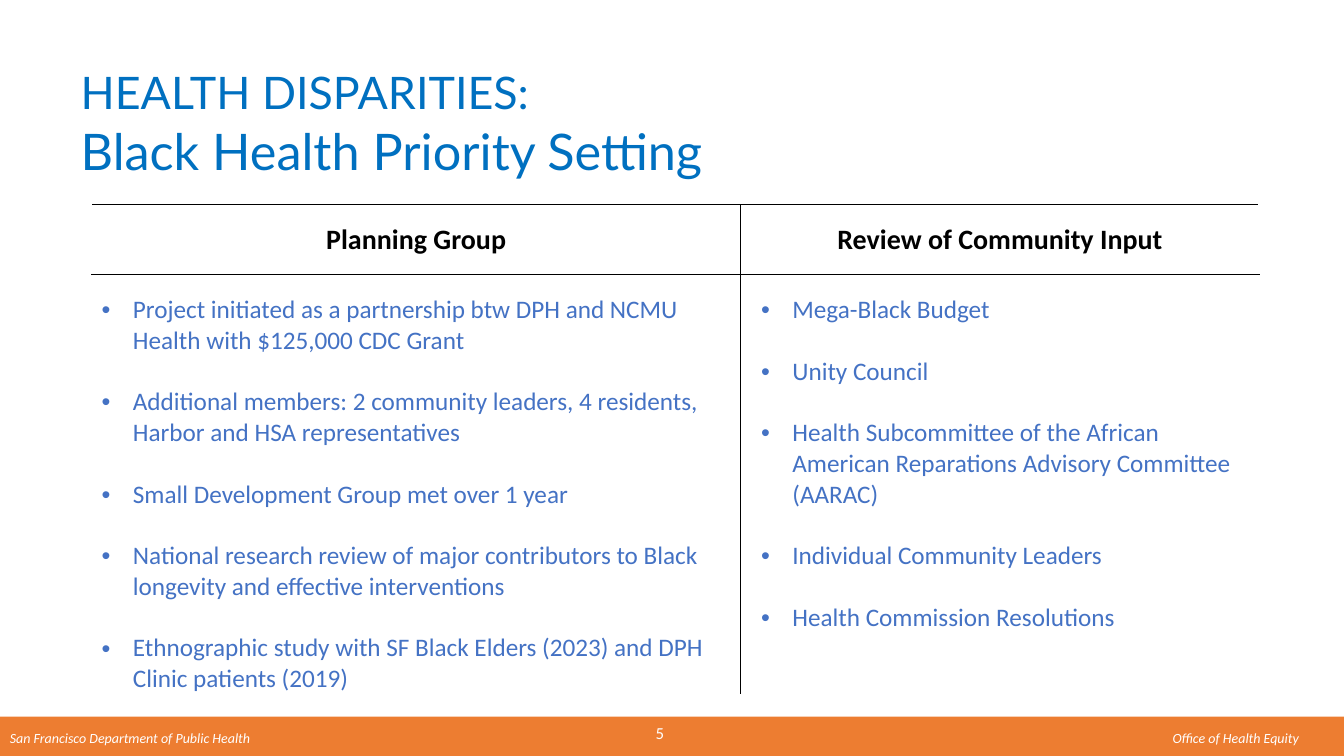
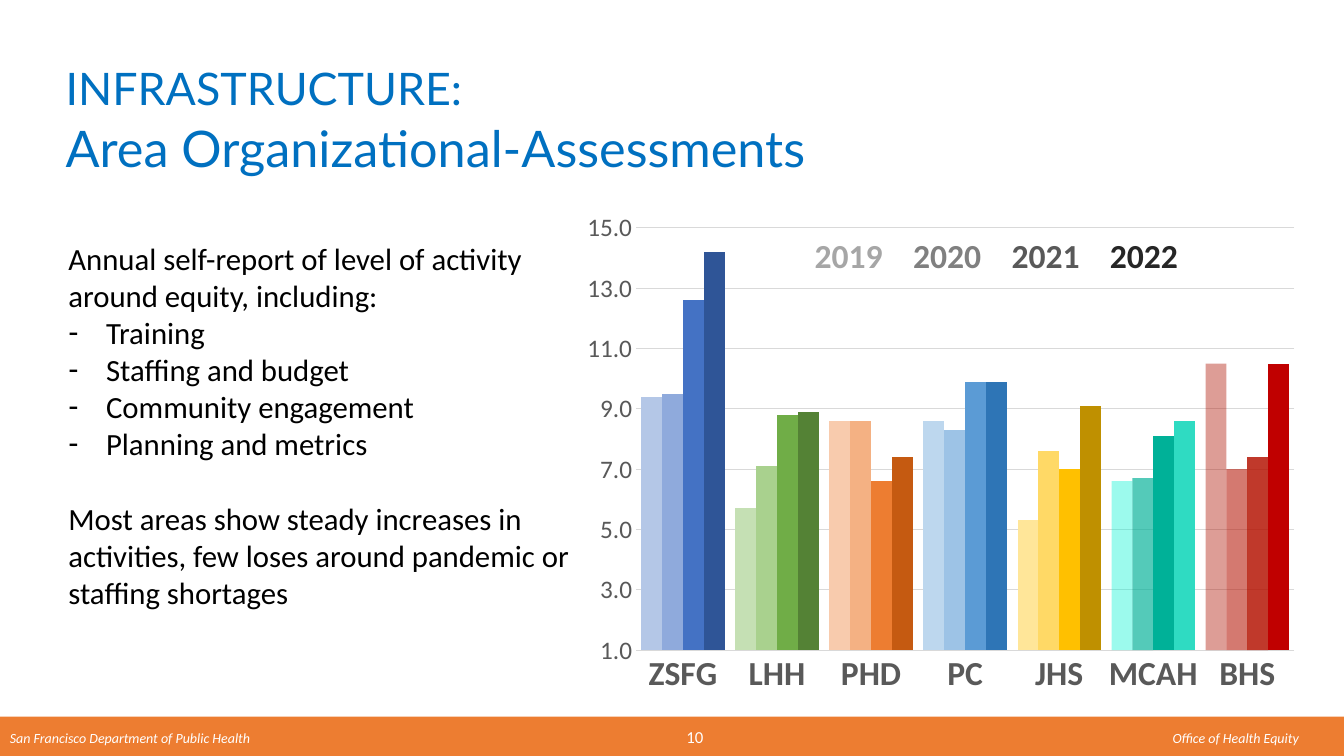
from lxml.etree import SubElement
from pptx import Presentation
from pptx.chart.data import CategoryChartData
from pptx.dml.color import RGBColor
from pptx.enum.chart import XL_CHART_TYPE, XL_TICK_MARK
from pptx.enum.shapes import MSO_SHAPE
from pptx.enum.text import MSO_ANCHOR, MSO_AUTO_SIZE, PP_ALIGN
from pptx.oxml import parse_xml
from pptx.oxml.ns import nsdecls, qn
from pptx.util import Cm, Pt

rgb = RGBColor.from_string
BLUE, BAND, WHITE, BLACK = "0070C0", "ED7D31", "FFFFFF", "000000"
ITEM, GRAY, GRID = "4472C4", "595959", "D9D9D9"
FONT, HEAD = "Calibri", "Lato"


def label(slide, left, mid, width, text, size, color, align=PP_ALIGN.LEFT):
    """Add one line of text, centred vertically on mid (cm)."""
    box = slide.shapes.add_textbox(Cm(left), Cm(mid - 0.5), Cm(width), Cm(1))
    frame = box.text_frame
    frame.word_wrap = True
    frame.vertical_anchor = MSO_ANCHOR.MIDDLE
    frame.margin_left = frame.margin_right = 0
    para = frame.paragraphs[0]
    para.text, para.alignment = text, align
    font = para.font
    font.name, font.size, font.color.rgb = FONT, Pt(size), rgb(color)
    return font


def bullet(para, mark, indent):
    """Give a paragraph a hanging bullet, or none without a mark."""
    props = para._p.get_or_add_pPr()
    props.set("marL", str(Cm(indent)))
    props.set("indent", str(-Cm(indent)))
    if mark:
        SubElement(props, qn("a:buFont")).set("typeface", "Arial")
        SubElement(props, qn("a:buChar")).set("char", mark)
    else:
        SubElement(props, qn("a:buNone"))


deck = Presentation()
deck.slide_width, deck.slide_height = Cm(33.87), Cm(19.05)

# Titles, bands and footers: layout, title lines, title box, number, its centre
pages = [
    (5, "HEALTH DISPARITIES:", "Black Health Priority Setting",
     (1.78, 1.68, 31.88, 3), "5", (16.63, 18.47)),
    (1, "INFRASTRUCTURE:", "Area Organizational-Assessments",
     (1.4, 1.47, 27.94, 3.23), "10", (17.51, 18.57)),
]
for layout, top, sub, place, number, (x, y) in pages:
    slide = deck.slides.add_slide(deck.slide_layouts[layout])
    title = slide.shapes.title
    title.left, title.top, title.width, title.height = map(Cm, place)
    frame = title.text_frame
    frame.text = f"{top}\n{sub}"
    frame.auto_size = MSO_AUTO_SIZE.NONE
    frame.vertical_anchor = MSO_ANCHOR.MIDDLE
    for para, size in zip(frame.paragraphs, (32, 36)):
        para.alignment = PP_ALIGN.LEFT
        para.line_spacing, para.space_after = 0.9, Pt(6)
        font = para.font
        font.name, font.size, font.color.rgb = HEAD, Pt(size), rgb(BLUE)

    band = slide.shapes.add_shape(
        MSO_SHAPE.RECTANGLE, 0, Cm(18.06), deck.slide_width, Cm(0.99))
    band.shadow.inherit = False
    band.fill.solid()
    band.fill.fore_color.rgb = rgb(BAND)
    band.line.fill.background()
    for left, width, text in (
            (0.25, 8, "San Francisco Department of Public Health"),
            (29.55, 4.1, "Office of Health Equity")):
        label(slide, left, 18.6, width, text, 10, WHITE).italic = True
    label(slide, x - 0.75, y, 1.5, number, 12, WHITE, PP_ALIGN.CENTER)

first, second = deck.slides

# Table of planning and input
groups = [
    ("Planning Group", 16.36, 0.25, [
        "Project initiated as a partnership btw DPH and NCMU Health with "
        "$125,000 CDC Grant",
        "Additional members: 2 community leaders, 4 residents, Harbor and "
        "HSA representatives",
        "Small Development Group met over 1 year",
        "National research review of major contributors to Black longevity "
        "and effective interventions",
        "Ethnographic study with SF Black Elders (2023) and DPH Clinic "
        "patients (2019)"]),
    ("Review of Community Input", 13.06, 0.51, [
        "Mega-Black Budget",
        "Unity Council",
        "Health Subcommittee of the African American Reparations Advisory "
        "Committee (AARAC)",
        "Individual Community Leaders",
        "Health Commission Resolutions"]),
]
table = first.shapes.add_table(
    2, 2, Cm(2.31), Cm(5.16), Cm(29.42), Cm(12.32)).table
table.first_row = table.horz_banding = False
table.rows[0].height, table.rows[1].height = Cm(1.75), Cm(10.57)
for col, (name, width, inset, items) in enumerate(groups):
    table.columns[col].width = Cm(width)
    for row, lines in enumerate(([name], items)):
        cell = table.cell(row, col)
        props = cell._tc.get_or_add_tcPr()
        sides = ["lnL" if col else "lnR", "lnT"] + ["lnB"] * (row == 0)
        for side in sides:
            props.append(parse_xml(
                f'<a:{side} {nsdecls("a")} w="12700"><a:solidFill>'
                f'<a:srgbClr val="{BLACK}"/></a:solidFill></a:{side}>'))
        cell.fill.solid()
        cell.fill.fore_color.rgb = rgb(WHITE)
        cell.text = "\n".join(lines)
        if row:
            cell.margin_left, cell.margin_top = Cm(inset), Cm(0.51)
        else:
            cell.vertical_anchor = MSO_ANCHOR.MIDDLE
        for i, para in enumerate(cell.text_frame.paragraphs):
            font = para.font
            font.name, font.bold = FONT, row == 0
            font.size = Pt(18 if row else 20)
            font.color.rgb = rgb(ITEM if row else BLACK)
            if row:
                para.space_before = Pt(22 if i else 0)
                bullet(para, "•", 0.79)
            else:
                para.alignment = PP_ALIGN.CENTER

# Column chart of assessments
areas = ["ZSFG", "LHH", "PHD", "PC", "JHS", "MCAH", "BHS"]
years = [
    ("2019", "A6A6A6", [9.4, 5.7, 8.6, 8.6, 5.3, 6.6, 10.5],
     "B4C7E7 C5E0B4 F8CBAD BDD7EE FFE699 00F4D2 AE1100", {5: 39, 6: 41}),
    ("2020", "808080", [9.5, 7.1, 8.6, 8.3, 7.6, 6.7, 7],
     "8FAADC A9D18E F4B183 9DC3E6 FFD966 00B198 B41100", {5: 67, 6: 56}),
    ("2021", "595959", [12.6, 8.8, 6.6, 9.9, 7, 8.1, 7.4],
     "4472C4 70AD47 ED7D31 5B9BD5 FFC000 00B198 B41100", {6: 83}),
    ("2022", "262626", [14.2, 8.9, 7.4, 9.9, 9.1, 8.6, 10.5],
     "2F5597 548235 C55A11 2E75B6 BF9000 2FDBC2 C00000", {}),
]
data = CategoryChartData()
data.categories = areas
for year, tint, nums, fills, alphas in years:
    data.add_series(year, nums)
chart = second.shapes.add_chart(
    XL_CHART_TYPE.COLUMN_CLUSTERED, Cm(14.35), Cm(5.11), Cm(18.64),
    Cm(12.67), data).chart
chart.has_title = chart.has_legend = False
chart.font.name, chart.font.size = FONT, Pt(10)
chart.font.color.rgb = rgb(BLACK)
plot = chart.plots[0]
plot.gap_width, plot.overlap, plot.vary_by_categories = 52, 0, False
for series, (year, tint, nums, fills, alphas) in zip(plot.series, years):
    series.invert_if_negative = False
    for i, color in enumerate(fills.split()):
        fill = series.points[i].format.fill
        fill.solid()
        fill.fore_color.rgb = rgb(color)
        if i in alphas:
            node = fill._xPr.find(".//" + qn("a:srgbClr"))
            SubElement(node, qn("a:alpha")).set("val", str(alphas[i] * 1000))

# Axes and plot area
cats, vals = chart.category_axis, chart.value_axis
for axis, size in ((cats, 24), (vals, 18)):
    axis.major_tick_mark = axis.minor_tick_mark = XL_TICK_MARK.NONE
    font = axis.tick_labels.font
    font.name, font.size, font.color.rgb = FONT, Pt(size), rgb(GRAY)
    font.bold = axis is cats
vals.minimum_scale, vals.maximum_scale, vals.major_unit = 1, 15, 2
vals.tick_labels.number_format = "#,##0.0"
vals.tick_labels.number_format_is_linked = False
vals.format.line.fill.background()
for line in (cats.format.line, vals.major_gridlines.format.line):
    line.color.rgb, line.width = rgb(GRID), Pt(0.75)
area = chart._chartSpace.chart.plotArea
for old in area.findall(qn("c:layout")):
    area.remove(old)
spot = "".join(f'<c:{tag} val="{val}"/>' for tag, val in (
    ("layoutTarget", "inner"), ("xMode", "edge"), ("yMode", "edge"),
    ("x", 0.09), ("y", 0.05), ("w", 0.89), ("h", 0.84)))
area.insert(0, parse_xml(
    f'<c:layout {nsdecls("c")}><c:manualLayout>{spot}</c:manualLayout>'
    '</c:layout>'))

# Year key
for i, (year, tint, *rest) in enumerate(years):
    label(second, 20.15 + 2.48 * i, 6.43, 2.48, year, 24, tint,
          PP_ALIGN.CENTER).bold = True

# Text beside the chart
body = second.placeholders[1]
body.left, body.top, body.width, body.height = map(
    Cm, (1.47, 5.92, 13.54, 9.65))
notes = [
    ("", "Annual self-report of level of activity around equity, including:"),
    ("-", "Training"),
    ("-", "Staffing and budget"),
    ("-", "Community engagement"),
    ("-", "Planning and metrics"),
    ("", "Most areas show steady increases in activities, few loses around "
         "pandemic or staffing shortages"),
]
frame = body.text_frame
frame.text = "\n".join(text for mark, text in notes)
frame.auto_size = MSO_AUTO_SIZE.NONE
for para, (mark, text) in zip(frame.paragraphs, notes):
    para.space_before = Pt(0)
    font = para.font
    font.name, font.size, font.color.rgb = FONT, Pt(22), rgb(BLACK)
    bullet(para, mark, 0.95 if mark else 0)
frame.paragraphs[-1].space_before = Pt(27)

deck.save("out.pptx")
